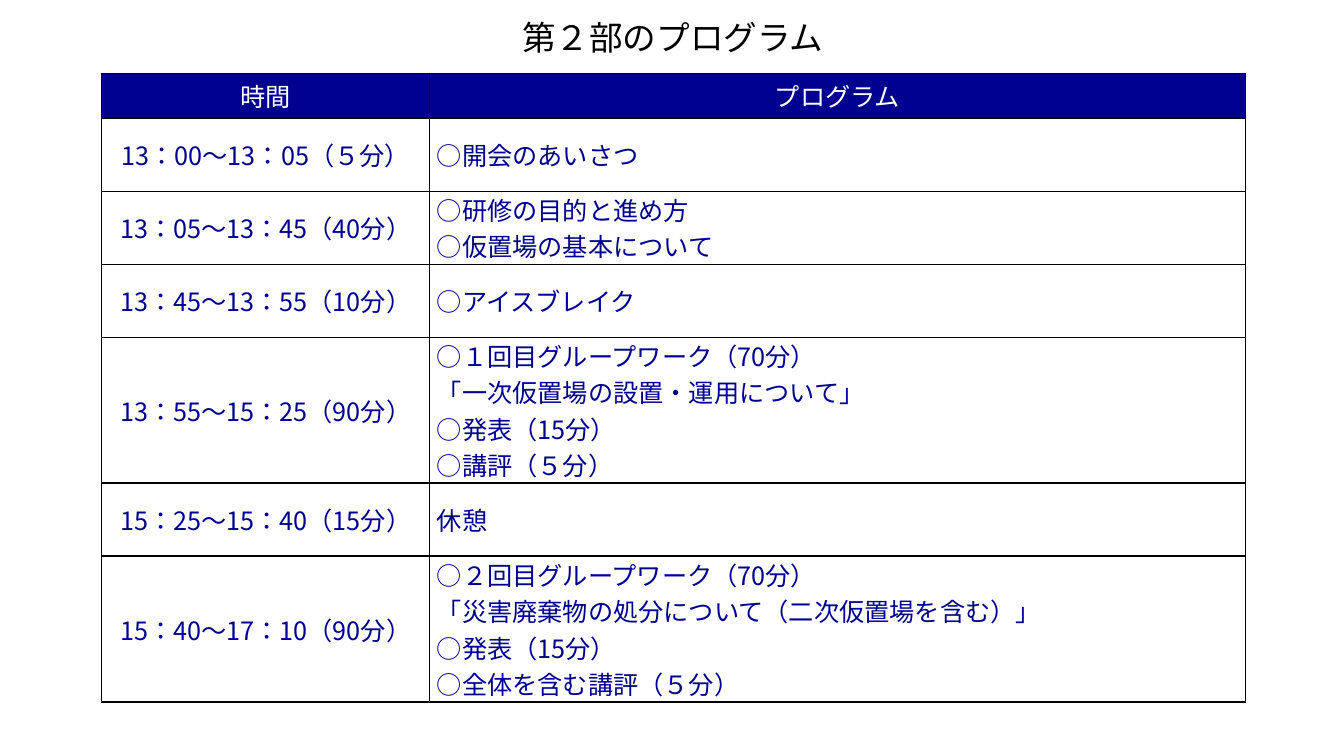
from dataclasses import dataclass

from lxml import etree
from pptx import Presentation
from pptx import util as u
from pptx.dml import color
from pptx.enum import lang, text
from pptx.oxml import ns


@dataclass(frozen=True)
class Theme:
    face: str = "Noto Sans CJK JP"
    title_size: int = 24
    table_size: int = 18
    black: str = "000000"
    white: str = "FFFFFF"
    navy: str = "000090"
    border_width: int = 1


THEME = Theme()
TITLE = "第２部のプログラム"
HEADINGS = ("時間", "プログラム")
COLUMN_WIDTHS = (8.27, 20.55)
HEADING_HEIGHT = 1.13
SESSIONS = [
    (1.4, "13：00～13：05（５分）", ["○開会のあいさつ"]),
    (1.75, "13：05～13：45（40分）", ["○研修の目的と進め方", "○仮置場の基本について"]),
    (1.4, "13：45～13：55（10分）", ["○アイスブレイク"]),
    (3.33, "13：55～15：25（90分）", [
        "○１回目グループワーク（70分）",
        "「一次仮置場の設置・運用について」",
        "○発表（15分）",
        "○講評（５分）",
    ]),
    (1.4, "15：25～15：40（15分）", ["休憩"]),
    (3.28, "15：40～17：10（90分）", [
        "○２回目グループワーク（70分）",
        "「災害廃棄物の処分について（二次仮置場を含む）」",
        "○発表（15分）",
        "○全体を含む講評（５分）",
    ]),
]


def apply_format(target, values):
    for attribute, value in values.items():
        setattr(target, attribute, value)


def write_lines(frame, lines, size, ink, align, spacing=1.0):
    for index, line in enumerate(lines):
        paragraph = frame.paragraphs[0] if index == 0 else frame.add_paragraph()
        apply_format(paragraph, {"alignment": align, "line_spacing": spacing})
        run = paragraph.add_run()
        run.text = line
        apply_format(run.font, {
            "size": u.Pt(size),
            "bold": False,
            "name": THEME.face,
            "language_id": lang.MSO_LANGUAGE_ID.JAPANESE,
        })
        run.font.color.rgb = color.RGBColor.from_string(ink)
        east_asian = etree.SubElement(run.font._element, ns.qn("a:ea"))
        east_asian.set("typeface", THEME.face)


def add_borders(cell):
    properties = cell._tc.get_or_add_tcPr()
    for index, side in enumerate(("a:lnL", "a:lnR", "a:lnT", "a:lnB")):
        border = etree.Element(ns.qn(side), w=str(u.Pt(THEME.border_width)))
        fill = etree.SubElement(border, ns.qn("a:solidFill"))
        etree.SubElement(fill, ns.qn("a:srgbClr"), val=THEME.black)
        properties.insert(index, border)


def fill_cell(cell, lines, ink, align, background=None):
    apply_format(cell, {
        "vertical_anchor": text.MSO_ANCHOR.MIDDLE,
        "margin_left": u.Cm(0.18),
        "margin_right": u.Cm(0.18),
        "margin_top": 0,
        "margin_bottom": 0,
    })
    if background:
        cell.fill.solid()
        cell.fill.fore_color.rgb = color.RGBColor.from_string(background)
    else:
        cell.fill.background()
    add_borders(cell)
    write_lines(cell.text_frame, lines, THEME.table_size, ink, align)


def add_title(slide):
    title = slide.shapes.title
    apply_format(title, {
        "left": u.Cm(2.35), "top": u.Cm(0.41),
        "width": u.Cm(29.21), "height": u.Cm(1.17),
    })
    apply_format(title.text_frame, {
        "vertical_anchor": text.MSO_ANCHOR.MIDDLE,
        "auto_size": text.MSO_AUTO_SIZE.NONE,
        "word_wrap": True,
    })
    write_lines(title.text_frame, [TITLE], THEME.title_size, THEME.black,
                text.PP_ALIGN.CENTER, 0.9)


def add_program(slide):
    heights = [HEADING_HEIGHT] + [height for height, _, _ in SESSIONS]
    program = slide.shapes.add_table(
        len(heights), len(COLUMN_WIDTHS), u.Cm(2.56), u.Cm(1.85),
        u.Cm(sum(COLUMN_WIDTHS)), u.Cm(sum(heights))).table
    for column, width in zip(program.columns, COLUMN_WIDTHS):
        column.width = u.Cm(width)
    for row, height in zip(program.rows, heights):
        row.height = u.Cm(height)
    for column, heading in enumerate(HEADINGS):
        fill_cell(program.cell(0, column), [heading], THEME.white,
                  text.PP_ALIGN.CENTER, THEME.navy)
    for row, (_, time, items) in enumerate(SESSIONS, start=1):
        fill_cell(program.cell(row, 0), [time], THEME.navy, text.PP_ALIGN.CENTER)
        fill_cell(program.cell(row, 1), items, THEME.navy, text.PP_ALIGN.JUSTIFY)


def main():
    deck = Presentation()
    apply_format(deck, {"slide_width": u.Cm(33.87), "slide_height": u.Cm(19.05)})
    slide = deck.slides.add_slide(deck.slide_layouts[5])
    add_title(slide)
    add_program(slide)
    deck.save("out.pptx")


if __name__ == "__main__":
    main()
